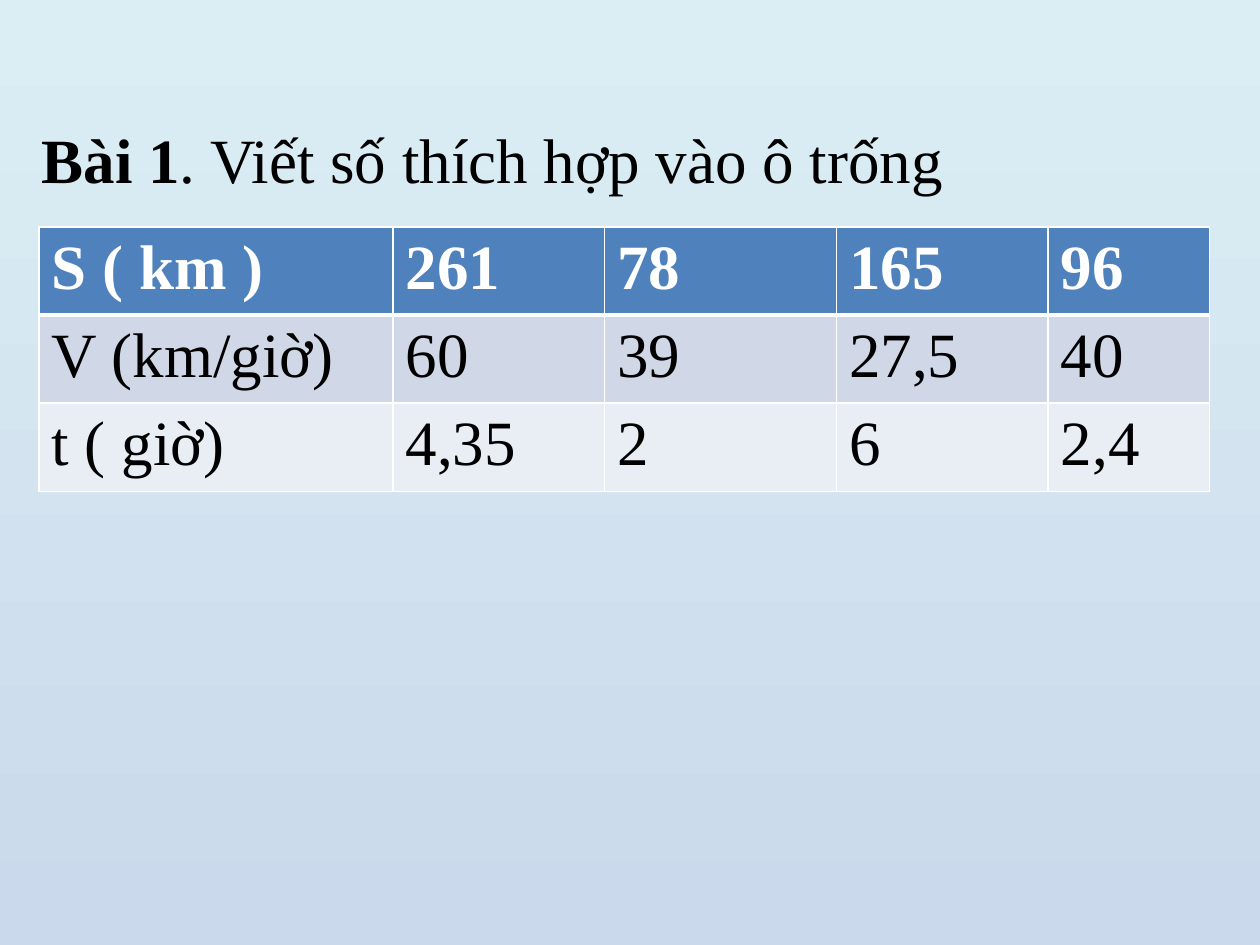
"""Build a slide with a speed, distance and time table."""
import dataclasses

import lxml.etree
import pptx
import pptx.dml.color
import pptx.enum.text
import pptx.oxml.ns
import pptx.util

Inches = pptx.util.Inches
FONT = "Times New Roman"
SIZE = 36
COLORS = {
    "top": "DBEEF4", "base": "CAD9EB", "head": "4F81BD",
    "dark": "D0D8E8", "light": "E9EDF4", "white": "FFFFFF", "black": "000000",
}
WIDTHS = (2.81, 1.68, 1.84, 1.68, 1.28)
HEIGHT = 0.7


@dataclasses.dataclass(frozen=True)
class Row:
    """Hold the texts and look of one table row."""
    texts: tuple[str, ...]
    fill: str
    ink: str = "black"
    bold: bool = False
    above: int = 1
    below: int = 1


ROWS = (
    Row(("S ( km )", "261", "78", "165", "96"), "head", "white", True, below=3),
    Row(("V (km/giờ)", "60", "39", "27,5", "40"), "dark", above=3),
    Row(("t ( giờ)", "4,35", "2", "6", "2,4"), "light"),
)


def get_color(name: str) -> pptx.dml.color.RGBColor:
    """Return the named color."""
    return pptx.dml.color.RGBColor.from_string(COLORS[name])


def add_run(para, text: str, ink: str, bold: bool) -> None:
    """Add one styled run to a paragraph."""
    run = para.add_run()
    run.text = text
    run.font.name = FONT
    run.font.size = pptx.util.Pt(SIZE)
    run.font.bold = bold
    run.font.color.rgb = get_color(ink)


def add_line(cell, side: str, width: int) -> None:
    """Draw a white border on one side of a cell."""
    qn = pptx.oxml.ns.qn
    props = cell._tc.get_or_add_tcPr()
    line = lxml.etree.SubElement(props, qn(f"a:ln{side}"), w=str(pptx.util.Pt(width)))
    fill = lxml.etree.SubElement(line, qn("a:solidFill"))
    lxml.etree.SubElement(fill, qn("a:srgbClr"), val=COLORS["white"])


def fill_cell(cell, text: str, row: Row) -> None:
    """Style one cell and write its text."""
    for side, width in (("L", 1), ("R", 1), ("T", row.above), ("B", row.below)):
        add_line(cell, side, width)
    cell.fill.solid()
    cell.fill.fore_color.rgb = get_color(row.fill)
    add_run(cell.text_frame.paragraphs[0], text, row.ink, row.bold)


def add_table(slide) -> None:
    """Add the table with all its rows."""
    frame = slide.shapes.add_table(
        len(ROWS), len(WIDTHS), Inches(0.31), Inches(1.8),
        Inches(sum(WIDTHS)), Inches(HEIGHT * len(ROWS)))
    table = frame.table
    for col, width in zip(table.columns, WIDTHS):
        col.width = Inches(width)
    for line, row in zip(table.rows, ROWS):
        line.height = Inches(HEIGHT)
        for cell, text in zip(line.cells, row.texts):
            fill_cell(cell, text, row)


def add_title(slide) -> None:
    """Write the task in the title placeholder."""
    title = slide.shapes.title
    title.left, title.top = Inches(0.23), Inches(0.91)
    title.width, title.height = Inches(9.77), Inches(0.68)
    frame = title.text_frame
    frame.word_wrap = True
    frame.auto_size = pptx.enum.text.MSO_AUTO_SIZE.NONE
    frame.vertical_anchor = pptx.enum.text.MSO_ANCHOR.TOP
    para = frame.paragraphs[0]
    para.alignment = pptx.enum.text.PP_ALIGN.LEFT
    add_run(para, "Bài 1", "black", True)
    add_run(para, ". Viết số thích hợp vào ô trống", "black", False)


def paint_back(slide) -> None:
    """Fill the background from top to base."""
    fill = slide.background.fill
    fill.gradient()
    fill.gradient_angle = 270
    for stop, name in zip(fill.gradient_stops, ("top", "base")):
        stop.color.rgb = get_color(name)


def main() -> None:
    """Build and save the slide."""
    deck = pptx.Presentation()
    deck.slide_width, deck.slide_height = Inches(10), Inches(7.5)
    slide = deck.slides.add_slide(deck.slide_layouts[5])
    paint_back(slide)
    add_title(slide)
    add_table(slide)
    deck.save("out.pptx")


if __name__ == "__main__":
    main()
